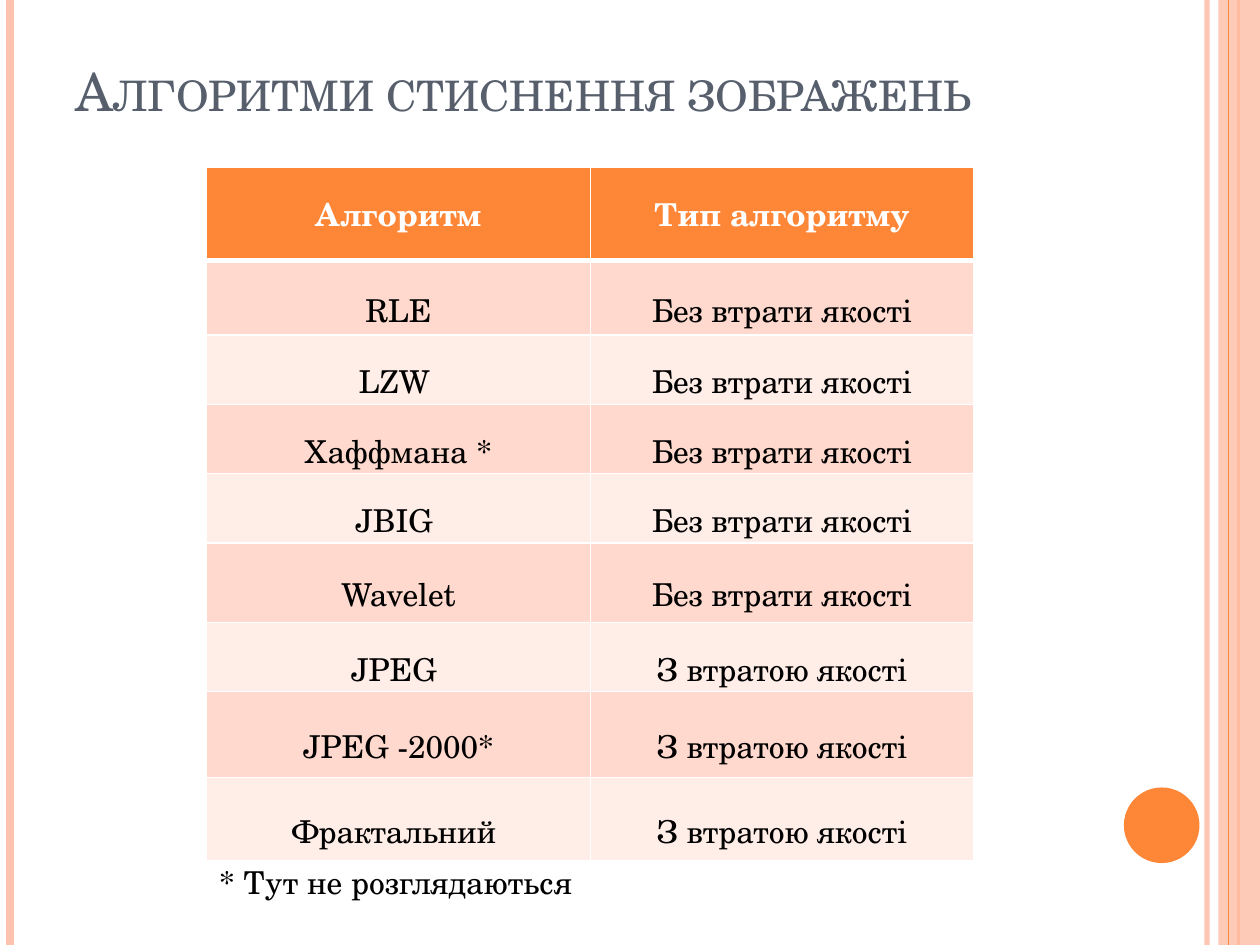
import pptx
import pptx.util
import pptx.dml.color
import pptx.enum.shapes
import pptx.enum.text
import pptx.oxml.ns
import lxml.etree

Inches, Pt = pptx.util.Inches, pptx.util.Pt
MSO_SHAPE = pptx.enum.shapes.MSO_SHAPE
ANCHOR = pptx.enum.text.MSO_ANCHOR
ALIGN = pptx.enum.text.PP_ALIGN

FONT = "TeX Gyre Schola"
ORANGE, PEACH, SLATE = "FE8637", "FEC3AE", "575F6D"
WHITE, BLACK = "FFFFFF", "000000"
BANDS = ["FFD9CE", "FFEDE8"]
NO_LOSS, LOSSY = "Без втрати якості", "З втратою якості"
LINE_ROW = 0.55  # least height that holds one line at 1.5 spacing
ROWS = [
    ("Алгоритм", "Тип алгоритму", 0.74),
    ("RLE", NO_LOSS, 0.59),
    ("LZW ", NO_LOSS, LINE_ROW),
    ("Хаффмана *", NO_LOSS, LINE_ROW),
    ("JBIG ", NO_LOSS, LINE_ROW),
    ("Wavelet", NO_LOSS, 0.63),
    ("JPEG ", LOSSY, LINE_ROW),
    ("JPEG -2000*", LOSSY, 0.68),
    ("Фрактальний ", LOSSY, 0.66),
]


def rgb(value):
    return pptx.dml.color.RGBColor.from_string(value)


def sub(parent, tag, **attrs):
    return lxml.etree.SubElement(parent, pptx.oxml.ns.qn(tag), attrs)


def set_alpha(sp, percent):
    """Make the solid fill or line colour inside a shape partly transparent."""
    color = next(sp._element.spPr.iter(pptx.oxml.ns.qn("a:srgbClr")))
    sub(color, "a:alpha", val=str(percent * 1000))


def write(tf, text, color, size=18, bold=False, **paragraph_format):
    p = tf.paragraphs[0]
    for name, value in paragraph_format.items():
        setattr(p, name, value)
    r = p.add_run()
    r.text = text
    r.font.color.rgb = rgb(color)
    for name, value in {"name": FONT, "size": Pt(size), "bold": bold}.items():
        setattr(r.font, name, value)
    return r


def add_text(s, box, text, color, size=18, anchor=ANCHOR.TOP):
    tf = s.shapes.add_textbox(*map(Inches, box)).text_frame
    tf.word_wrap = True
    tf.vertical_anchor = anchor
    return write(tf, text, color, size)


def add_rule(s, x, top, height, color, width):
    line = s.shapes.add_connector(
        pptx.enum.shapes.MSO_CONNECTOR.STRAIGHT,
        Inches(x), Inches(top), Inches(x), Inches(top + height))
    line.line.color.rgb = rgb(color)
    line.line.width = Pt(width)
    sub(line._element.spPr, "a:effectLst")
    return line


def add_plain_shape(s, kind, box, color):
    sp = s.shapes.add_shape(kind, *map(Inches, box))
    sp.shadow.inherit = False
    sp.fill.solid()
    sp.fill.fore_color.rgb = rgb(color)
    sp.line.fill.background()
    return sp


def add_decor(s, left, top, width, height):
    right = left + width
    set_alpha(add_rule(s, right - 0.42, top, height, PEACH, 3), 93)
    add_rule(s, left + 0.08, top, height, PEACH, 4.5)
    add_rule(s, right - 0.17, top, height, ORANGE, 1.5)
    band = add_plain_shape(s, MSO_SHAPE.RECTANGLE, (right - 0.33, top, 0.33, height), PEACH)
    set_alpha(band, 87)
    add_rule(s, right - 0.25, top, height, ORANGE, 0.75)
    add_plain_shape(s, MSO_SHAPE.OVAL, (right - 1.08, top + 6.25, 0.6, 0.6), ORANGE)


def add_title(s, box):
    r = add_text(s, box, "Алгоритми стиснення зображень", SLATE, 30, ANCHOR.BOTTOM)
    r.font._element.set("cap", "small")


def set_borders(cell, top, bottom):
    """Draw white borders, placed before the fill as the schema orders them."""
    tcPr = cell._tc.get_or_add_tcPr()
    for i, (side, width) in enumerate({"L": 1, "R": 1, "T": top, "B": bottom}.items()):
        ln = sub(tcPr, f"a:ln{side}", w=str(Pt(width)))
        sub(sub(ln, "a:solidFill"), "a:srgbClr", val=WHITE)
        tcPr.insert(i, ln)


def add_algorithm_table(s, left, top, width):
    height = sum(row[-1] for row in ROWS)
    table = s.shapes.add_table(
        len(ROWS), 2, *map(Inches, (left, top, width, height))).table
    for i, (*texts, row_height) in enumerate(ROWS):
        table.rows[i].height = Inches(row_height)
        header = i == 0
        for j, text in enumerate(texts):
            cell = table.cell(i, j)
            for side in ("left", "right", "top", "bottom"):
                setattr(cell, f"margin_{side}", 0)
            cell.vertical_anchor = ANCHOR.MIDDLE
            cell.fill.solid()
            cell.fill.fore_color.rgb = rgb(ORANGE if header else BANDS[(i - 1) % 2])
            # The cells on both sides of the thick header rule share its width
            set_borders(cell, top=3 if i == 1 else 1, bottom=3 if header else 1)
            write(cell.text_frame, text, WHITE if header else BLACK, bold=header,
                  alignment=ALIGN.CENTER, line_spacing=1.0 if header else 1.5)


def main():
    prs = pptx.Presentation()
    prs.slide_width, prs.slide_height = Inches(10), Inches(7.5)
    s = prs.slides.add_slide(prs.slide_layouts[6])
    add_decor(s, 0, 0, 10, 7.5)
    add_title(s, (0.5, 0.3, 8.17, 0.72))
    add_algorithm_table(s, 1.64, 1.33, 6.09)
    add_text(s, (1.64, 6.8, 6.02, 0.4), "* Тут не розглядаються", BLACK)
    prs.save("out.pptx")


if __name__ == "__main__":
    main()
